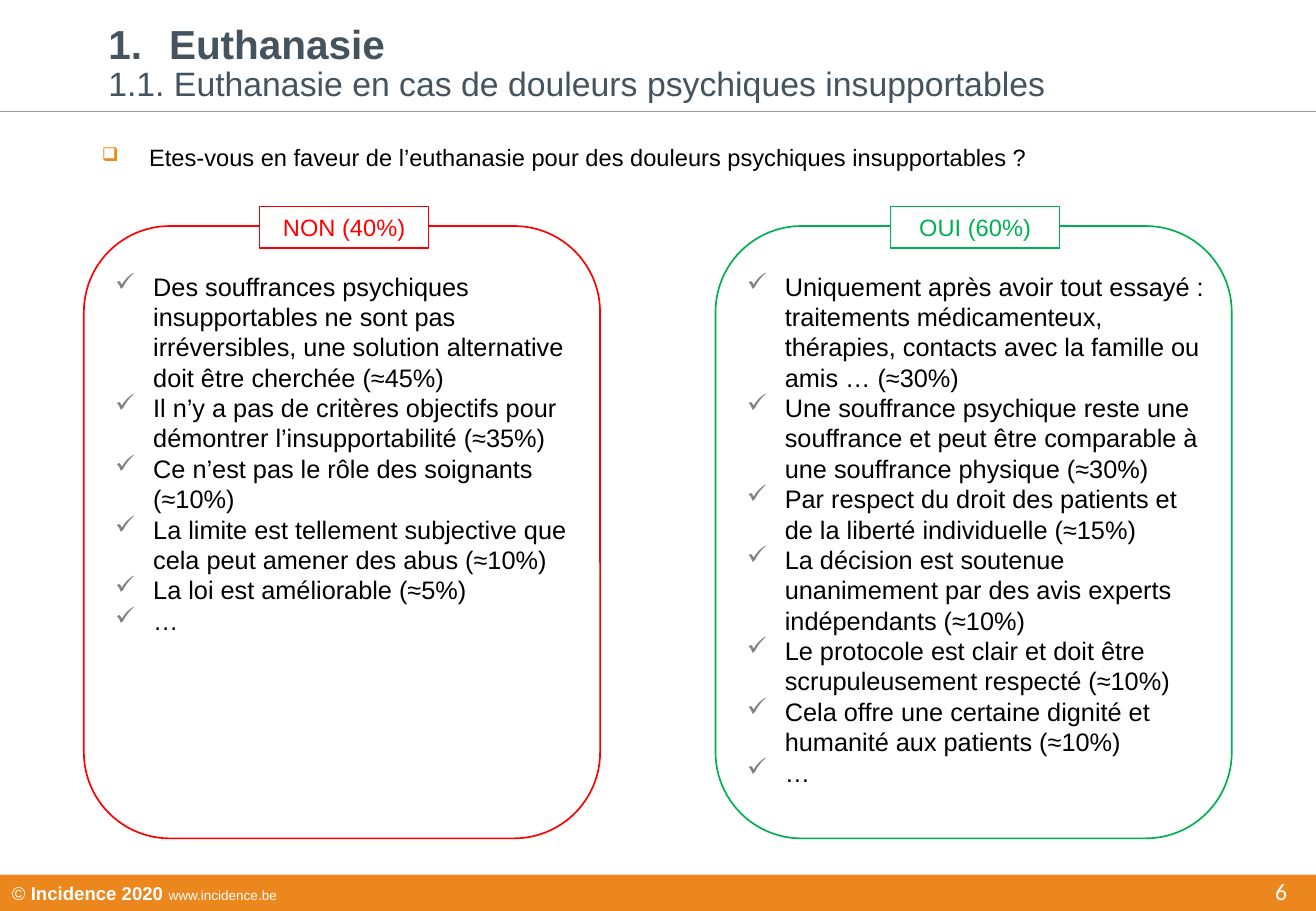
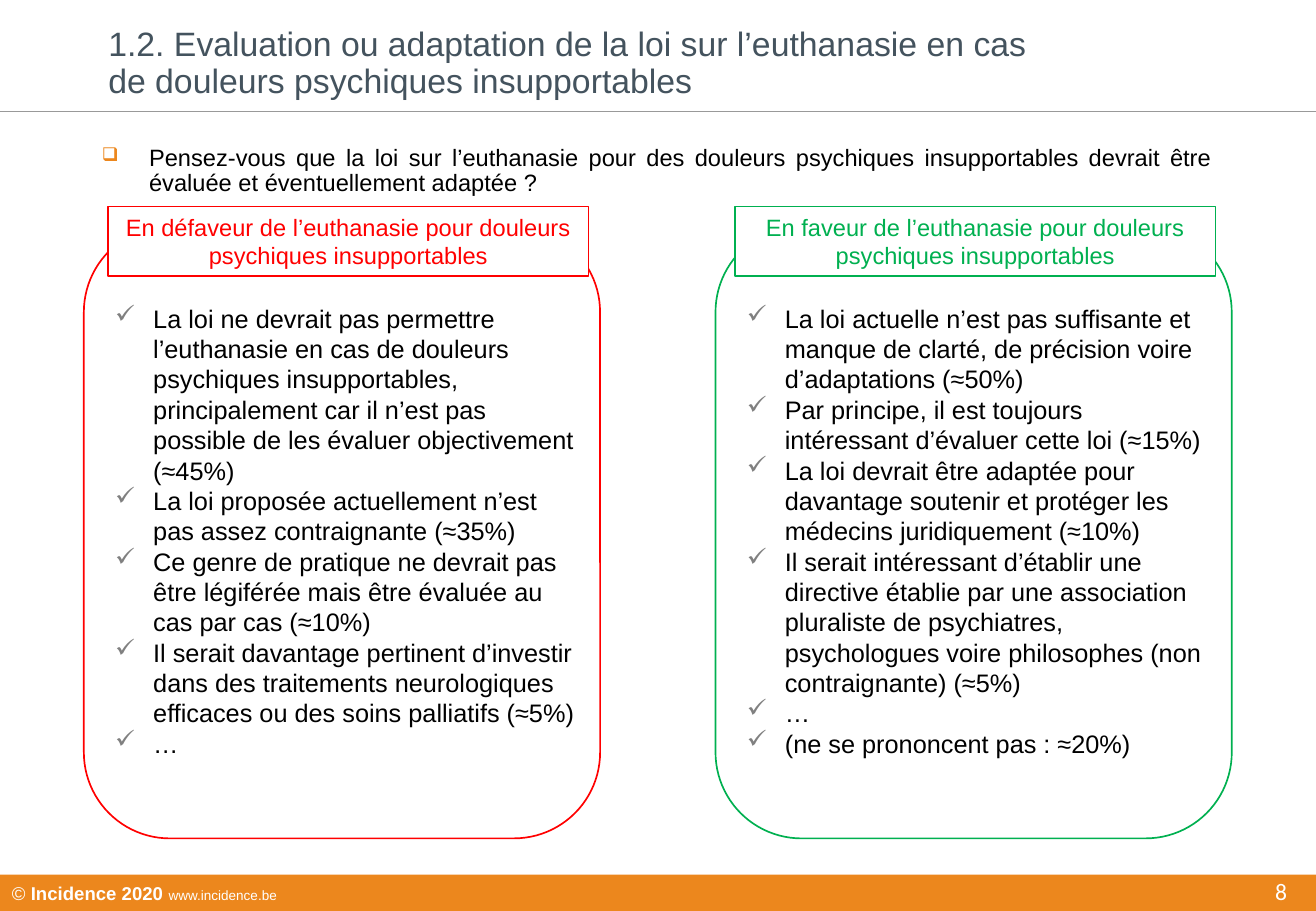
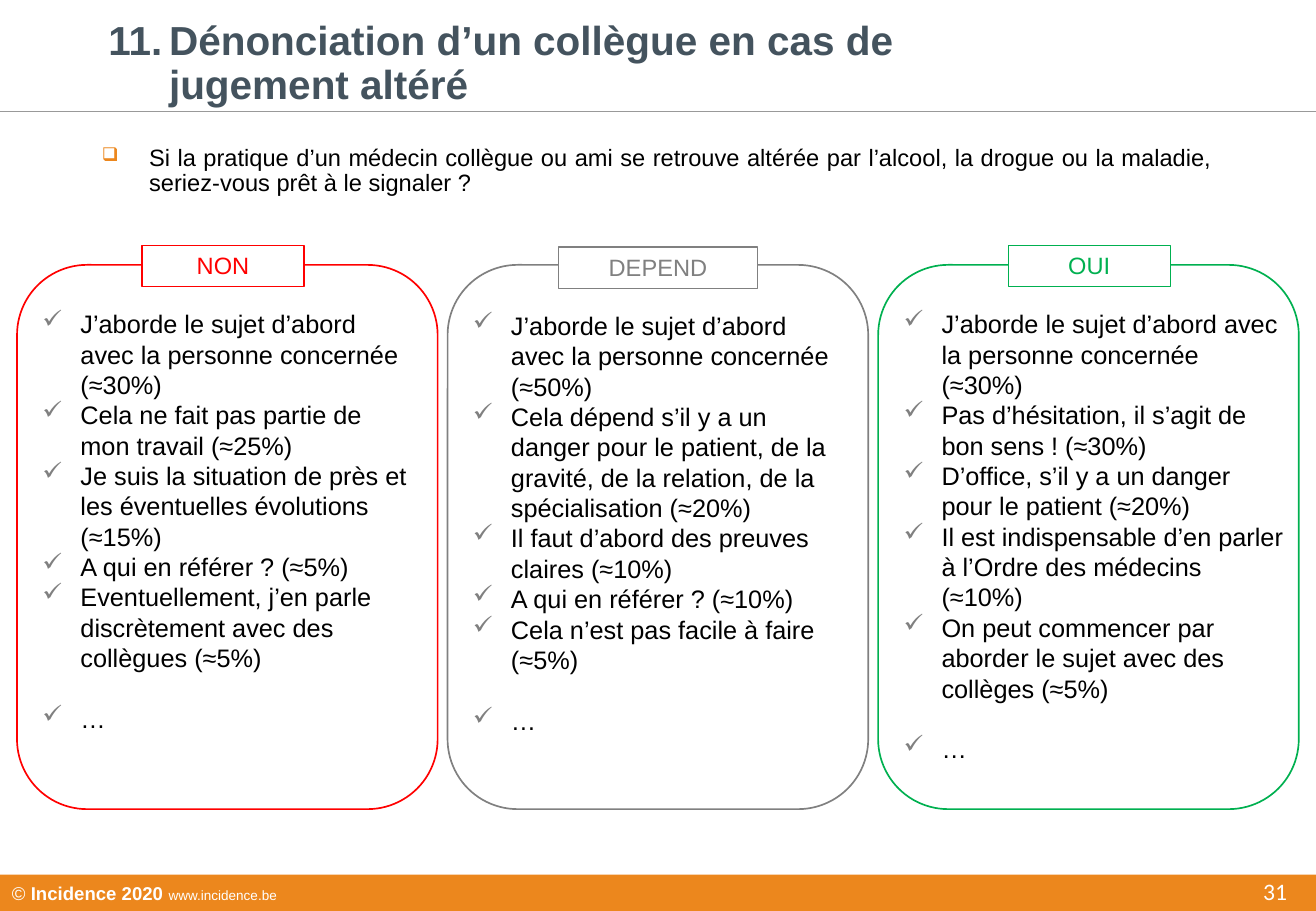
"""Build three survey slides with answer cards."""
from lxml import etree
from pptx import Presentation
from pptx.dml.color import RGBColor
from pptx.enum import shapes, text
from pptx.oxml import ns
from pptx.util import Pt

HUES = {"band": "EC871D", "rule": "999999", "title": "44535E", "ink": "000000",
        "white": "FFFFFF", "no": "FF0000", "yes": "00B050", "mid": "808080"}
WIDE, HIGH = 780, 540


def hue(key):
    """Return the colour for a key."""
    return RGBColor.from_string(HUES[key])


def mark(par, tag, **attrs):
    """Append a drawing element to the paragraph properties."""
    return etree.SubElement(par._p.get_or_add_pPr(), ns.qn("a:" + tag), attrs)


def hang(par, gap):
    """Give the paragraph a hanging indent."""
    props = par._p.get_or_add_pPr()
    props.set("marL", str(Pt(gap)))
    props.set("indent", str(-Pt(gap)))


def bullet(par, char, key, gap, size=100):
    """Give the paragraph a coloured bullet."""
    hang(par, gap)
    etree.SubElement(mark(par, "buClr"), ns.qn("a:srgbClr"), val=HUES[key])
    mark(par, "buSzPct", val=str(size * 1000))
    mark(par, "buChar", char=char)


class Deck:
    """Hold the style and the current slide."""

    def __init__(self):
        """Start an empty deck."""
        self.prs = Presentation()
        self.prs.slide_width, self.prs.slide_height = Pt(WIDE), Pt(HIGH)
        self.slide = None

    def run(self, par, words, size, key="ink", bold=False, font="Arial"):
        """Add one styled run."""
        run = par.add_run()
        run.text = words
        run.font.size, run.font.bold, run.font.name = Pt(size), bold, font
        run.font.color.rgb = hue(key)

    def shape(self, kind, box, fill=None, line=None, width=1):
        """Add a flat preset shape."""
        item = self.slide.shapes.add_shape(kind, *map(Pt, box))
        item.shadow.inherit = False
        if fill:
            item.fill.solid()
            item.fill.fore_color.rgb = hue(fill)
        else:
            item.fill.background()
        if line:
            item.line.color.rgb = hue(line)
            item.line.width = Pt(width)
        else:
            item.line.fill.background()
        return item

    def box(self, place):
        """Add a wrapping text box and return its frame."""
        frame = self.slide.shapes.add_textbox(*map(Pt, place)).text_frame
        frame.word_wrap = True
        return frame

    def page(self, number, heads, ask):
        """Add a slide with title, rule, footer and question."""
        self.slide = self.prs.slides.add_slide(self.prs.slide_layouts[5])
        self.title(heads)
        self.rule()
        self.foot(number)
        par = self.box((53.3, 82.8, 672.5, 38)).paragraphs[0]
        bullet(par, "❑", "band", 28, 80)
        par.alignment, par.line_spacing = text.PP_ALIGN.JUSTIFY, 0.9
        self.run(par, ask, 14)

    def title(self, heads):
        """Fill the title; a head with a number is a chapter."""
        item = self.slide.shapes.title
        item.left, item.top, item.width, item.height = map(Pt, (57, 6, 587, 64))
        frame = item.text_frame
        frame.word_wrap, frame.auto_size = True, text.MSO_AUTO_SIZE.NONE
        frame.vertical_anchor = text.MSO_ANCHOR.MIDDLE
        frame.margin_left = frame.margin_right = Pt(7.2)
        frame.margin_top = frame.margin_bottom = Pt(5.76)
        for spot, (start, words) in enumerate(heads):
            par = frame.add_paragraph() if spot else frame.paragraphs[0]
            par.alignment, par.line_spacing = text.PP_ALIGN.LEFT, 0.9
            if start:
                hang(par, 36)
                mark(par, "buAutoNum", type="arabicPeriod", startAt=str(start))
            self.run(par, words, 24 if start else 20, "title", bool(start))

    def rule(self):
        """Draw the line under the title."""
        line = self.slide.shapes.add_connector(
            shapes.MSO_CONNECTOR.STRAIGHT, 0, Pt(66), Pt(WIDE), Pt(66))
        line.line.color.rgb, line.line.width = hue("rule"), Pt(0.5)
        etree.SubElement(line._element.spPr, ns.qn("a:effectLst"))

    def foot(self, number):
        """Draw the footer band and the page number."""
        band = self.shape(shapes.MSO_SHAPE.RECTANGLE, (0, 518.4, WIDE, 21.6), "band")
        band.text_frame.vertical_anchor = text.MSO_ANCHOR.MIDDLE
        par = band.text_frame.paragraphs[0]
        par.alignment = text.PP_ALIGN.LEFT
        self.run(par, "© ", 11, "white")
        self.run(par, "Incidence 2020 ", 11, "white", True)
        self.run(par, "www.incidence.be", 8, "white")
        frame = self.box((605, 511.2, 165, 28.8))
        frame.vertical_anchor = text.MSO_ANCHOR.BOTTOM
        par = frame.paragraphs[0]
        par.alignment = text.PP_ALIGN.RIGHT
        self.run(par, str(number), 14, "white", font="Calibri")

    def card(self, key, place, tag, label, body, points, last=0):
        """Draw a rounded card with its label and checked points."""
        self.shape(shapes.MSO_SHAPE.ROUNDED_RECTANGLE, place, line=key)
        item = self.shape(shapes.MSO_SHAPE.RECTANGLE, tag, "white", key, 0.75)
        frame = item.text_frame
        frame.word_wrap, frame.vertical_anchor = True, text.MSO_ANCHOR.TOP
        par = frame.paragraphs[0]
        par.alignment = text.PP_ALIGN.CENTER
        self.run(par, label, 14, key)
        frame = self.box(body)
        for spot, words in enumerate(points):
            par = frame.add_paragraph() if spot else frame.paragraphs[0]
            bullet(par, "✓", "mid", 22.5)
            if last and words == "…":
                par.space_before = Pt(last)
            self.run(par, words, 15)

    def pair(self, high, top, cards):
        """Draw a card against and a card in favour."""
        for spot, (key, left, wide, label, points) in enumerate(cards):
            x = 49.7 + 374.4 * spot
            self.card(key, (x, 134, 306, 363), (left, 122.6, wide, high), label,
                      (x + 11.5, top, 289.5, 300), points)

    def trio(self, cards):
        """Draw three cards side by side."""
        for spot, (key, left, wide, drop, room, label, points) in enumerate(cards):
            x = 10.1 + 255.2 * spot
            self.card(key, (x, 157, 249.3, 322.6), (left, 145.4 + drop, wide, 24.5),
                      label, (x + 8, 179.3 + drop, room, 280), points, 18)


def main():
    """Build and save the deck."""
    deck = Deck()
    deck.page(6, [(1, "Euthanasie"),
                  (0, "1.1. Euthanasie en cas de douleurs psychiques insupportables")],
              "Etes-vous en faveur de l’euthanasie pour des douleurs psychiques insupportables ?")
    deck.pair(24.5, 157, [
        ("no", 154, 100, "NON (40%)", [
            "Des souffrances psychiques insupportables ne sont pas irréversibles, "
            "une solution alternative doit être cherchée (≈45%)",
            "Il n’y a pas de critères objectifs pour démontrer l’insupportabilité (≈35%)",
            "Ce n’est pas le rôle des soignants (≈10%)",
            "La limite est tellement subjective que cela peut amener des abus (≈10%)",
            "La loi est améliorable (≈5%)",
            "…"]),
        ("yes", 528, 100, "OUI (60%)", [
            "Uniquement après avoir tout essayé : traitements médicamenteux, "
            "thérapies, contacts avec la famille ou amis … (≈30%)",
            "Une souffrance psychique reste une souffrance et peut être comparable "
            "à une souffrance physique (≈30%)",
            "Par respect du droit des patients et de la liberté individuelle (≈15%)",
            "La décision est soutenue unanimement par des avis experts indépendants (≈10%)",
            "Le protocole est clair et doit être scrupuleusement respecté (≈10%)",
            "Cela offre une certaine dignité et humanité aux patients (≈10%)",
            "…"])])

    deck.page(8, [(0, "1.2. Evaluation ou adaptation de la loi sur l’euthanasie en cas "
                      "de douleurs psychiques insupportables")],
              "Pensez-vous que la loi sur l’euthanasie pour des douleurs psychiques "
              "insupportables devrait être évaluée et éventuellement adaptée ?")
    deck.pair(41, 176, [
        ("no", 64, 285, "En défaveur de l’euthanasie pour douleurs psychiques insupportables", [
            "La loi ne devrait pas permettre l’euthanasie en cas de douleurs psychiques "
            "insupportables, principalement car il n’est pas possible de les évaluer "
            "objectivement (≈45%)",
            "La loi proposée actuellement n’est pas assez contraignante (≈35%)",
            "Ce genre de pratique ne devrait pas être légiférée mais être évaluée "
            "au cas par cas (≈10%)",
            "Il serait davantage pertinent d’investir dans des traitements neurologiques "
            "efficaces ou des soins palliatifs (≈5%)",
            "…"]),
        ("yes", 435.6, 285, "En faveur de l’euthanasie pour douleurs psychiques insupportables", [
            "La loi actuelle n’est pas suffisante et manque de clarté, de précision "
            "voire d’adaptations (≈50%)",
            "Par principe, il est toujours intéressant d’évaluer cette loi (≈15%)",
            "La loi devrait être adaptée pour davantage soutenir et protéger "
            "les médecins juridiquement (≈10%)",
            "Il serait intéressant d’établir une directive établie par une association "
            "pluraliste de psychiatres, psychologues voire philosophes "
            "(non contraignante) (≈5%)",
            "…",
            "(ne se prononcent pas : ≈20%)"])])

    deck.page(31, [(11, "Dénonciation d’un collègue en cas de jugement altéré")],
              "Si la pratique d’un médecin collègue ou ami se retrouve altérée par l’alcool, "
              "la drogue ou la maladie, seriez-vous prêt à le signaler ?")
    deck.trio([
        ("no", 84.2, 96, 0, 235.5, "NON", [
            "J’aborde le sujet d’abord avec la personne concernée (≈30%)",
            "Cela ne fait pas partie de mon travail (≈25%)",
            "Je suis la situation de près et les éventuelles évolutions (≈15%)",
            "A qui en référer ? (≈5%)",
            "Eventuellement, j’en parle discrètement avec des collègues (≈5%)",
            "…"]),
        ("mid", 331, 118, 1, 235.5, "DEPEND", [
            "J’aborde le sujet d’abord avec la personne concernée (≈50%)",
            "Cela dépend s’il y a un danger pour le patient, de la gravité, "
            "de la relation, de la spécialisation (≈20%)",
            "Il faut d’abord des preuves claires (≈10%)",
            "A qui en référer ? (≈10%)",
            "Cela n’est pas facile à faire (≈5%)",
            "…"]),
        ("yes", 597.6, 96, 0, 241, "OUI", [
            "J’aborde le sujet d’abord avec la personne concernée (≈30%)",
            "Pas d’hésitation, il s’agit de bon sens ! (≈30%)",
            "D’office, s’il y a un danger pour le patient (≈20%)",
            "Il est indispensable d’en parler à l’Ordre des médecins (≈10%)",
            "On peut commencer par aborder le sujet avec des collèges (≈5%)",
            "…"])])
    deck.prs.save("out.pptx")


if __name__ == "__main__":
    main()
